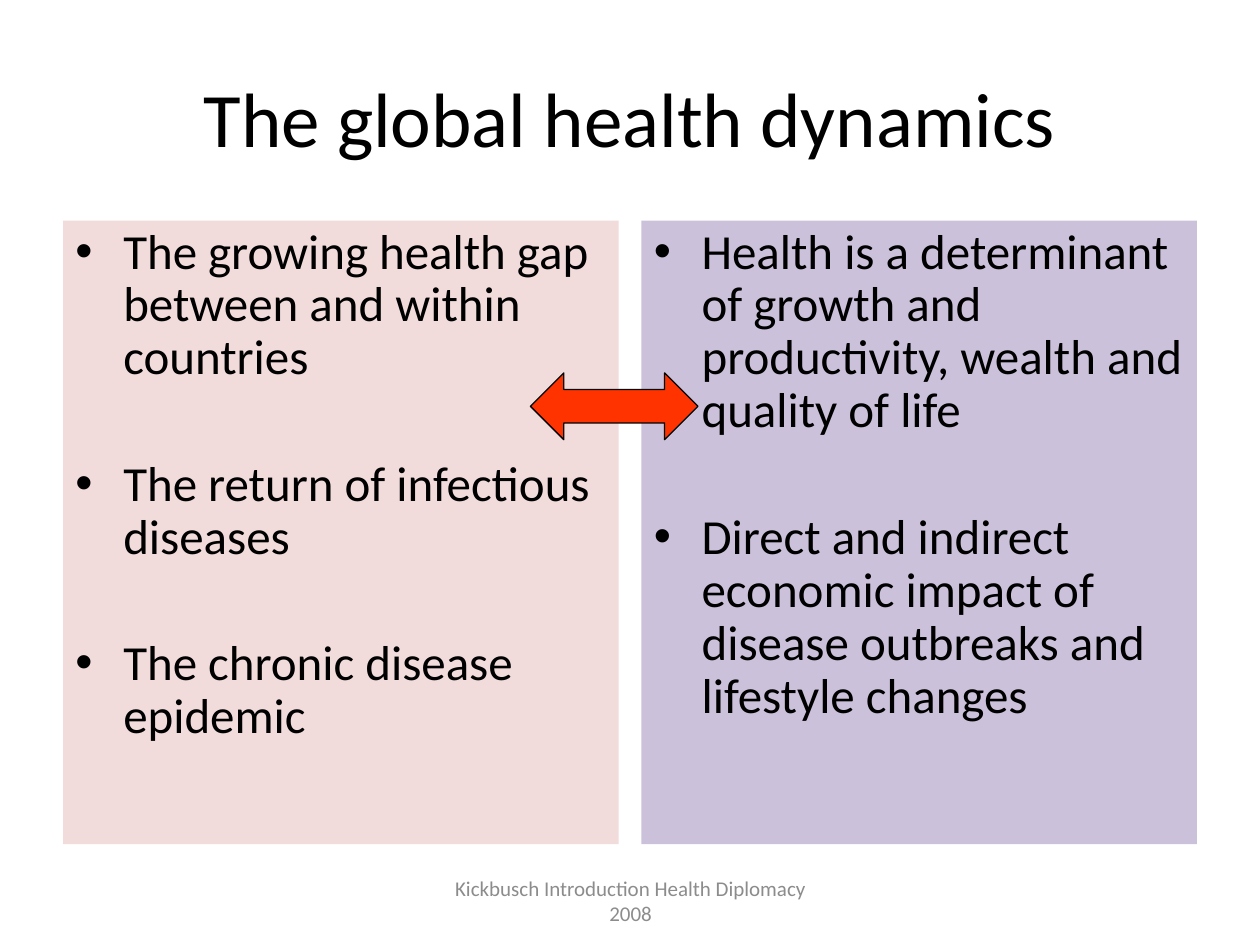
from pptx import Presentation
from pptx.dml.color import RGBColor
from pptx.enum.shapes import MSO_SHAPE
from pptx.enum.text import MSO_ANCHOR, PP_ALIGN
from pptx.oxml.ns import qn
from pptx.util import Inches, Pt
from lxml import etree

RECTANGLE = MSO_SHAPE.RECTANGLE
DOUBLE_ARROW = MSO_SHAPE.LEFT_RIGHT_ARROW
TOP, MIDDLE = MSO_ANCHOR.TOP, MSO_ANCHOR.MIDDLE
LEFT, CENTER = PP_ALIGN.LEFT, PP_ALIGN.CENTER

WIDTH, HEIGHT = Inches(10), Inches(7.5)
MARGIN, GAP = 0.5, 0.18  # inches
COLUMN = (10 - 2 * MARGIN - GAP) / 2
COLORS = {"ink": "000000", "muted": "8C8C8C", "rose": "F2DCDB",
          "lilac": "CCC1DA", "red": "FF3300"}


class SlideBuilder:
    """Holds the style and the current page; lengths are in inches."""

    font_name = "Calibri"
    indent = Inches(0.38)

    def __init__(self, deck):
        self.page = deck.slides.add_slide(deck.slide_layouts[5])

    def color(self, name):
        return RGBColor.from_string(COLORS[name])

    def place(self, box, left, top, width, height):
        box.left, box.top = Inches(left), Inches(top)
        box.width, box.height = Inches(width), Inches(height)

    def set_text(self, box, lines, size, color="ink", align=CENTER, anchor=MIDDLE):
        frame = box.text_frame
        frame.word_wrap = True
        frame.vertical_anchor = anchor
        frame.text = "\n".join(lines)
        for para in frame.paragraphs:
            para.alignment = align
            para.font.name = self.font_name
            para.font.size = Pt(size)
            para.font.color.rgb = self.color(color)
        return frame.paragraphs

    def title(self, text, *area):
        box = self.page.shapes.title
        self.place(box, *area)
        self.set_text(box, [text], 44)

    def shape(self, kind, fill, *area):
        box = self.page.shapes.add_shape(kind, *map(Inches, area))
        box.shadow.inherit = False
        box.fill.solid()
        box.fill.fore_color.rgb = self.color(fill)
        box.line.fill.background()
        return box

    def bullet_panel(self, column, fill, items):
        left = MARGIN + column * (COLUMN + GAP)
        box = self.shape(RECTANGLE, fill, left, 1.75, COLUMN, 4.95)
        paragraphs = self.set_text(box, items, 28, align=LEFT, anchor=TOP)
        for index, para in enumerate(paragraphs):
            para.line_spacing = 0.9
            para.space_before = Pt(42 if index else 0)
            props = para._p.get_or_add_pPr()
            props.set("marL", str(self.indent))
            props.set("indent", str(-self.indent))
            bullet_font = etree.Element(qn("a:buFont"), typeface="Arial")
            bullet = etree.Element(qn("a:buChar"), char="•")
            props.find(qn("a:spcBef")).addnext(bullet_font)
            bullet_font.addnext(bullet)

    def double_arrow(self, *area):
        arrow = self.shape(DOUBLE_ARROW, "red", *area)
        arrow.line.color.rgb = self.color("ink")
        arrow.line.width = Pt(0.75)

    def footer(self, text, *area):
        box = self.page.shapes.add_textbox(*map(Inches, area))
        self.set_text(box, [text], 12, "muted")


def main():
    deck = Presentation()
    deck.slide_width, deck.slide_height = WIDTH, HEIGHT
    slide = SlideBuilder(deck)

    # Heading
    slide.title("The global health dynamics", MARGIN, 0.3, 9, 1.25)

    # Two facing panels
    slide.bullet_panel(0, "rose", [
        "The growing health gap between and within countries",
        "The return of infectious diseases",
        "The chronic disease epidemic",
    ])
    slide.bullet_panel(1, "lilac", [
        "Health is a determinant of growth and productivity, wealth and quality of life",
        "Direct and indirect economic impact of disease outbreaks and lifestyle changes",
    ])

    # Footer and the link between the panels
    slide.footer("Kickbusch Introduction Health Diplomacy 2008", 3.42, 6.95, 3.17, 0.4)
    slide.double_arrow(4.21, 2.96, 1.33, 0.53)

    deck.save("out.pptx")


if __name__ == "__main__":
    main()
